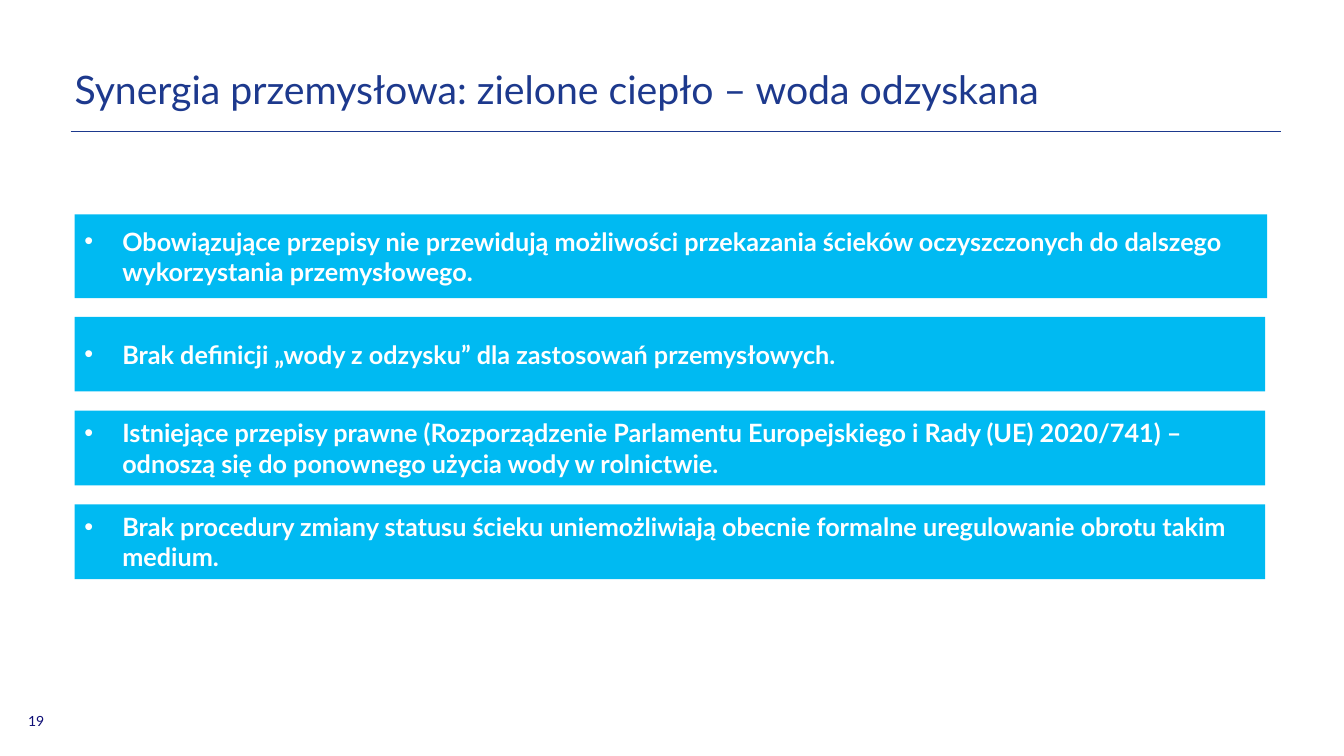
from pptx import Presentation
from pptx.dml.color import RGBColor
from pptx.enum.shapes import MSO_CONNECTOR as CONN, MSO_SHAPE as SHAPE
from pptx.enum.text import MSO_ANCHOR as ANCHOR, PP_ALIGN as ALIGN
from pptx.oxml.ns import qn
from pptx.util import Pt
from lxml.etree import SubElement

NAVY, SKY, WHITE = "1D398D", "00BAF2", "FFFFFF"
LEFT = 53.3
INDENT = 27

TITLE = dict(size=Pt(28), bold=False)
BAR = dict(size=Pt(18), bold=True)
NUMBER = dict(size=Pt(10), bold=False)

# Text, top, width, height of each bar; the last three share one rhythm
FIRST_BAR = ("Obowiązujące przepisy nie przewidują możliwości przekazania ścieków "
             "oczyszczonych do dalszego wykorzystania przemysłowego.")
OTHER_BARS = [
    "Brak definicji „wody z odzysku” dla zastosowań przemysłowych.",
    "Istniejące przepisy prawne (Rozporządzenie Parlamentu Europejskiego i Rady (UE) "
    "2020/741) – odnoszą się do ponownego użycia wody w rolnictwie.",
    "Brak procedury zmiany statusu ścieku uniemożliwiają obecnie formalne "
    "uregulowanie obrotu takim medium.",
]
BAR_TOP, BAR_STEP, BAR_HEIGHT = 226.3, 67, 53.4


def rgb(color):
    return RGBColor.from_string(color)


def write(sp, text, fmt, color, anchor, bullet=False):
    tf = sp.text_frame
    tf.word_wrap = True
    tf.vertical_anchor = anchor
    p = tf.paragraphs[0]
    p.alignment = ALIGN.LEFT
    if bullet:
        pPr = p._p.get_or_add_pPr()
        pPr.set("marL", str(Pt(INDENT)))
        pPr.set("indent", str(Pt(-INDENT)))
        SubElement(pPr, qn("a:buFont"), typeface="Arial")
        SubElement(pPr, qn("a:buChar"), char="•")
    r = p.add_run()
    r.text = text
    r.font.name = "Lato"
    r.font.color.rgb = rgb(color)
    for name, value in fmt.items():
        setattr(r.font, name, value)


def add_label(s, box, text, fmt, color, anchor=ANCHOR.TOP):
    sp = s.shapes.add_textbox(*map(Pt, box))
    write(sp, text, fmt, color, anchor)
    return sp


def add_bar(s, top, width, height, text):
    sp = s.shapes.add_shape(SHAPE.RECTANGLE, Pt(LEFT), Pt(top), Pt(width), Pt(height))
    sp.shadow.inherit = False
    sp.fill.solid()
    sp.fill.fore_color.rgb = rgb(SKY)
    sp.line.fill.background()
    write(sp, text, BAR, WHITE, ANCHOR.MIDDLE, bullet=True)


def add_rule(s, x1, x2, y):
    line = s.shapes.add_connector(CONN.STRAIGHT, Pt(x1), Pt(y), Pt(x2), Pt(y))
    line.line.color.rgb = rgb(NAVY)
    line.line.width = Pt(0.5)
    SubElement(line._element.spPr, qn("a:effectLst"))


def main():
    prs = Presentation()
    prs.slide_width, prs.slide_height = Pt(960), Pt(540)
    s = prs.slides.add_slide(prs.slide_layouts[6])

    # Heading
    add_rule(s, 50.4, 915.1, 93.6)
    title = add_label(s, (LEFT, 33.8, 872, 59.8),
                      "Synergia przemysłowa: zielone ciepło – woda odzyskana",
                      TITLE, NAVY, ANCHOR.MIDDLE)
    title.text_frame.margin_left = 0

    # Statement bars
    add_bar(s, 153.2, 851.8, 59.8, FIRST_BAR)
    for i, text in enumerate(OTHER_BARS):
        add_bar(s, BAR_TOP + i * BAR_STEP, 850.5, BAR_HEIGHT, text)

    # Slide number
    add_label(s, (13, 505.4, 33, 23), "19", NUMBER, "0F0F76")

    prs.save("out.pptx")


if __name__ == "__main__":
    main()
